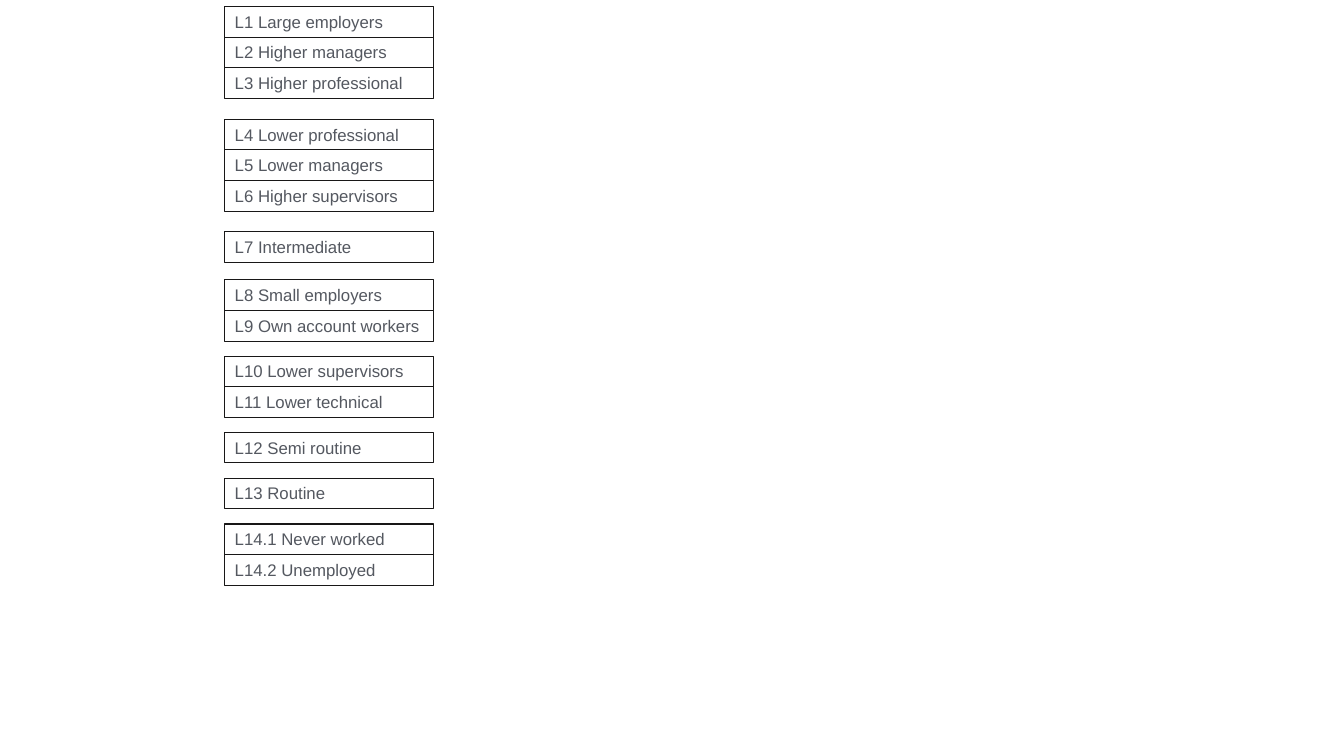
from pptx import Presentation
from pptx.dml.color import RGBColor
from pptx.enum.text import MSO_AUTO_SIZE as AutoSize
from pptx.util import Pt

COLUMN_LEFT = 160.6
COLUMN_WIDTH = 149
ROW_HEIGHT = 21.9

CLASS_GROUPS = [
    (4.6, ["L1 Large employers", "L2 Higher managers", "L3 Higher professional"]),
    (85.2, ["L4 Lower professional", "L5 Lower managers", "L6 Higher supervisors"]),
    (165.6, ["L7 Intermediate"]),
    (199.9, ["L8 Small employers", "L9 Own account workers"]),
    (254.4, ["L10 Lower supervisors", "L11 Lower technical"]),
    (308.8, ["L12 Semi routine"]),
    (341.5, ["L13 Routine"]),
    (374.3, ["L14.1 Never worked", "L14.2 Unemployed"]),
]


def color(value):
    return RGBColor.from_string(value)


def write(para, text, *, size, font, fill):
    span = para.add_run()
    span.text = text
    span.font.size = Pt(size)
    span.font.name = font
    span.font.color.rgb = color(fill)


def add_class_box(page, left, top, width, height, label):
    box = page.shapes.add_textbox(Pt(left), Pt(top), Pt(width), Pt(height))
    box.line.color.rgb = color("181717")
    box.line.width = Pt(0.75)
    box.text_frame.word_wrap = True
    box.text_frame.auto_size = AutoSize.SHAPE_TO_FIT_TEXT
    write(box.text_frame.paragraphs[0], label, size=12, font="Arial", fill="545860")


def add_class_group(page, left, top, width, labels):
    for row, label in enumerate(labels):
        add_class_box(page, left, top + row * ROW_HEIGHT, width, ROW_HEIGHT, label)


def main():
    deck = Presentation()
    deck.slide_width = Pt(960)
    deck.slide_height = Pt(540)
    page = deck.slides.add_slide(deck.slide_layouts[6])
    for top, labels in CLASS_GROUPS:
        add_class_group(page, COLUMN_LEFT, top, COLUMN_WIDTH, labels)
    deck.save("out.pptx")


if __name__ == "__main__":
    main()
